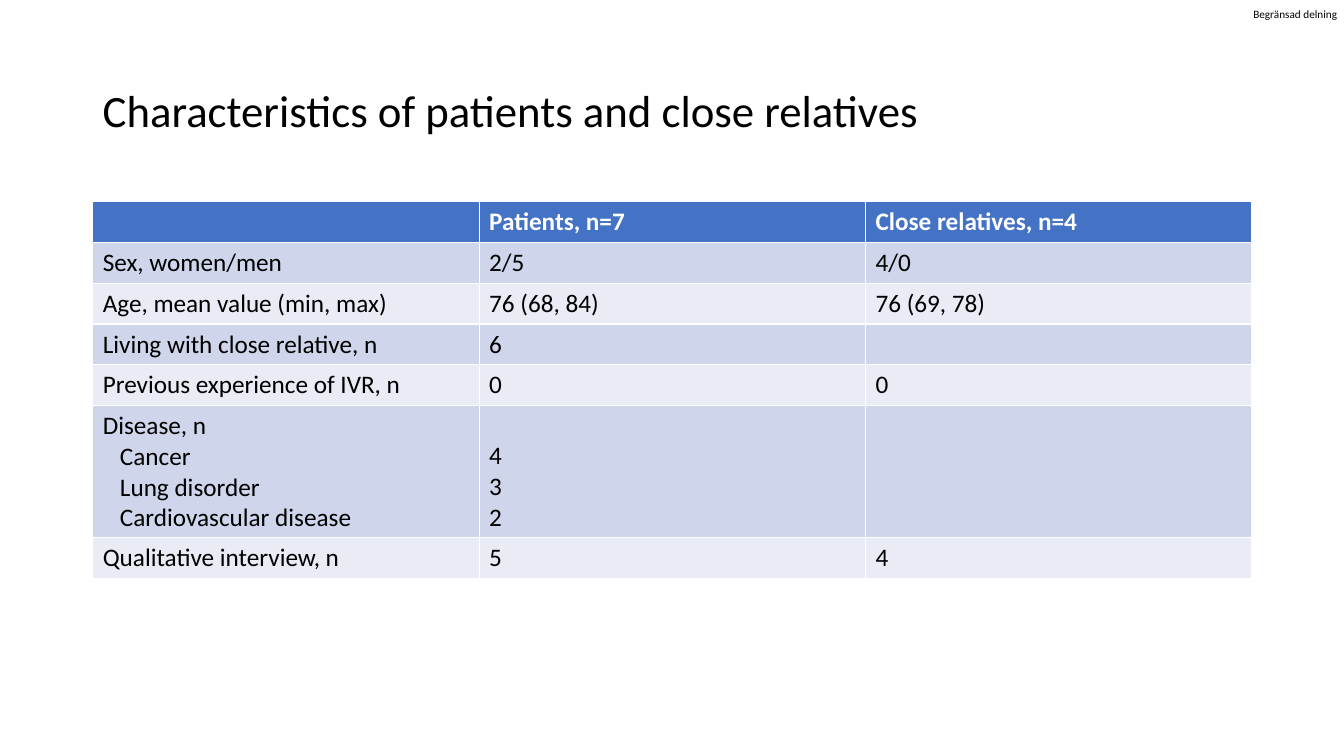
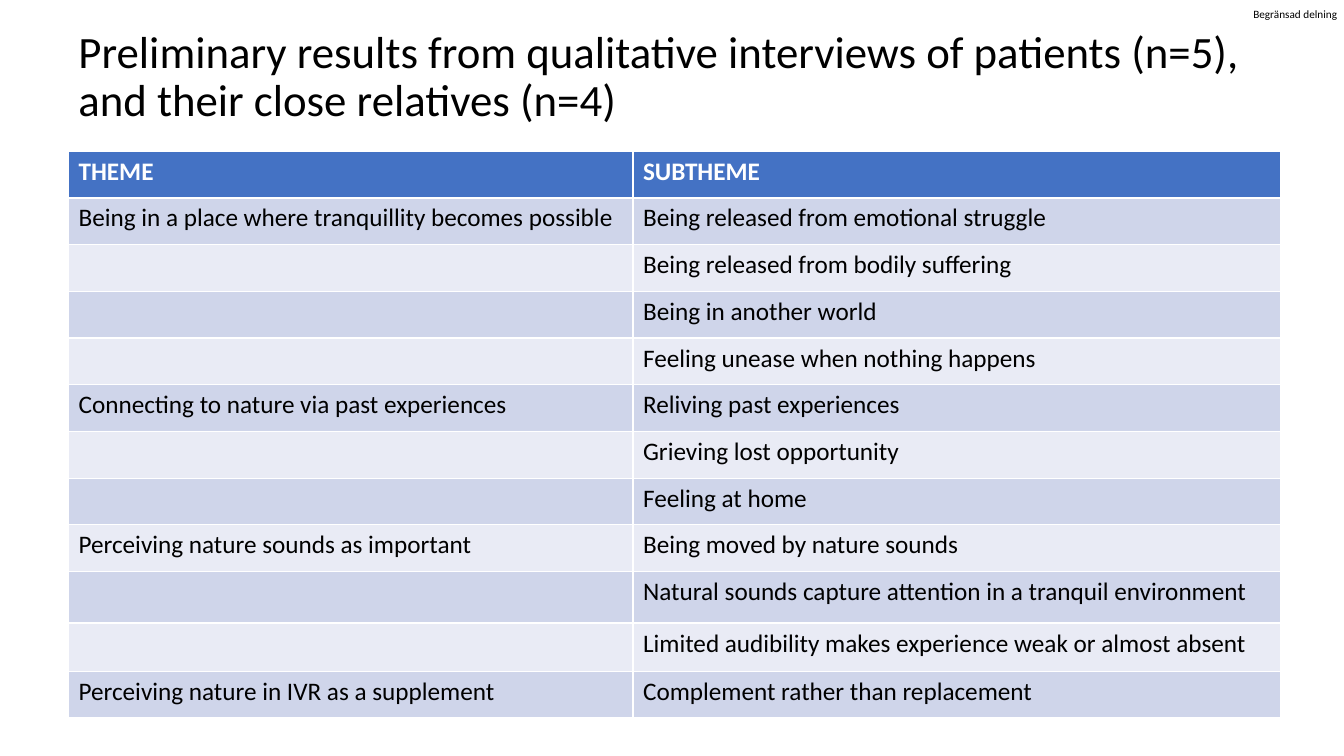
from dataclasses import dataclass

from pptx import Presentation
from pptx.dml.color import RGBColor
from pptx.enum.text import MSO_ANCHOR
from pptx.util import Inches, Pt

MIDDLE = MSO_ANCHOR.MIDDLE
BOTTOM = MSO_ANCHOR.BOTTOM


@dataclass(frozen=True)
class Theme:
    font: str = "Calibri"
    text: RGBColor = RGBColor(0x00, 0x00, 0x00)
    head_text: RGBColor = RGBColor(0xFF, 0xFF, 0xFF)
    head_fill: RGBColor = RGBColor(0x44, 0x72, 0xC4)
    bands: tuple = (RGBColor(0xCF, 0xD5, 0xEA), RGBColor(0xE9, 0xEB, 0xF5))
    title_size: int = 32
    body_size: int = 18
    label_size: int = 8
    indent: float = 0.17


THEME = Theme()

prs = Presentation()
prs.slide_width, prs.slide_height = Inches(13.33), Inches(7.5)
BLANK = prs.slide_layouts[6]
COL = prs.slide_width / 100
ROW = prs.slide_height / 100


def format_text(tf, size, color, bold=False):
    for p in tf.paragraphs:
        for r in p.runs:
            r.font.name = THEME.font
            r.font.size = Pt(size)
            r.font.bold = bold
            r.font.color.rgb = color


def add_text(slide, text, size, left, top, width, height):
    """Place a text box measured in hundredths of the slide."""
    sp = slide.shapes.add_textbox(int(left * COL), int(top * ROW),
                                  int(width * COL), int(height * ROW))
    tf = sp.text_frame
    tf.text = text
    format_text(tf, size, THEME.text)
    return tf


# Lengths are hundredths of the slide's width or height.
SLIDES = [
    {
        "title": "Characteristics of patients and close relatives",
        "left": 6.9, "title_top": 5.33, "table_top": 26.67,
        "columns": [28.75] * 3,
        "row_height": 5.4, "tall_rows": {5: 17.5},
        "rows": [
            ("", "Patients, n=7", "Close relatives, n=4"),
            ("Sex, women/men", "2/5", "4/0"),
            ("Age, mean value (min, max)", "76 (68, 84)", "76 (69, 78)"),
            ("Living with close relative, n", "6", ""),
            ("Previous experience of IVR, n", "0", "0"),
            ("Disease, n\nCancer\nLung disorder\nCardiovascular disease",
             "4\n3\n2", ""),
            ("Qualitative interview, n", "5", "4"),
        ],
    },
    {
        "title": "Preliminary results from qualitative interviews of patients "
                 "(n=5),\vand their close relatives (n=4)",
        "left": 5.1, "title_top": 0.67, "table_top": 20,
        "columns": [42, 48.15],
        "row_height": 6.18, "tall_rows": {9: 6.8, 10: 6.4},
        "rows": [
            ("THEME", "SUBTHEME"),
            ("Being in a place where tranquillity becomes possible",
             "Being released from emotional struggle"),
            ("", "Being released from bodily suffering"),
            ("", "Being in another world"),
            ("", "Feeling unease when nothing happens"),
            ("Connecting to nature via past experiences",
             "Reliving past experiences"),
            ("", "Grieving lost opportunity"),
            ("", "Feeling at home"),
            ("Perceiving nature sounds as important",
             "Being moved by nature sounds"),
            ("", "Natural sounds capture attention in a tranquil environment"),
            ("", "Limited audibility makes experience weak or almost absent"),
            ("Perceiving nature in IVR as a supplement",
             "Complement rather than replacement"),
        ],
    },
]

for content in SLIDES:
    slide = prs.slides.add_slide(BLANK)
    rows, columns = content["rows"], content["columns"]
    width = sum(columns)

    label = add_text(slide, "Begränsad delning", THEME.label_size,
                     93.25, 0.93, 6.45, 1.73)
    label.margin_left = label.margin_right = 0
    label.margin_top = label.margin_bottom = 0

    title = add_text(slide, content["title"], THEME.title_size,
                     content["left"], content["title_top"], width, 19.33)
    title.word_wrap = True
    title.vertical_anchor = MIDDLE
    title.paragraphs[0].line_spacing = 0.9

    heights = [content["tall_rows"].get(i, content["row_height"])
               for i in range(len(rows))]
    table = slide.shapes.add_table(
        len(rows), len(columns),
        int(content["left"] * COL), int(content["table_top"] * ROW),
        int(width * COL), int(sum(heights) * ROW)).table
    for column, share in zip(table.columns, columns):
        column.width = int(share * COL)

    for i, texts in enumerate(rows):
        table.rows[i].height = int(heights[i] * ROW)
        is_head = i == 0
        fill = THEME.head_fill if is_head else THEME.bands[(i - 1) % 2]
        color = THEME.head_text if is_head else THEME.text
        for j, text in enumerate(texts):
            cell = table.cell(i, j)
            cell.fill.solid()
            cell.fill.fore_color.rgb = fill
            tf = cell.text_frame
            tf.text = text
            format_text(tf, THEME.body_size, color, is_head)
            if "\n" not in text:
                continue
            if j == 0:
                for p in tf.paragraphs[1:]:
                    p._p.get_or_add_pPr().set("marL", str(Inches(THEME.indent)))
            else:
                cell.vertical_anchor = BOTTOM

prs.save("out.pptx")
